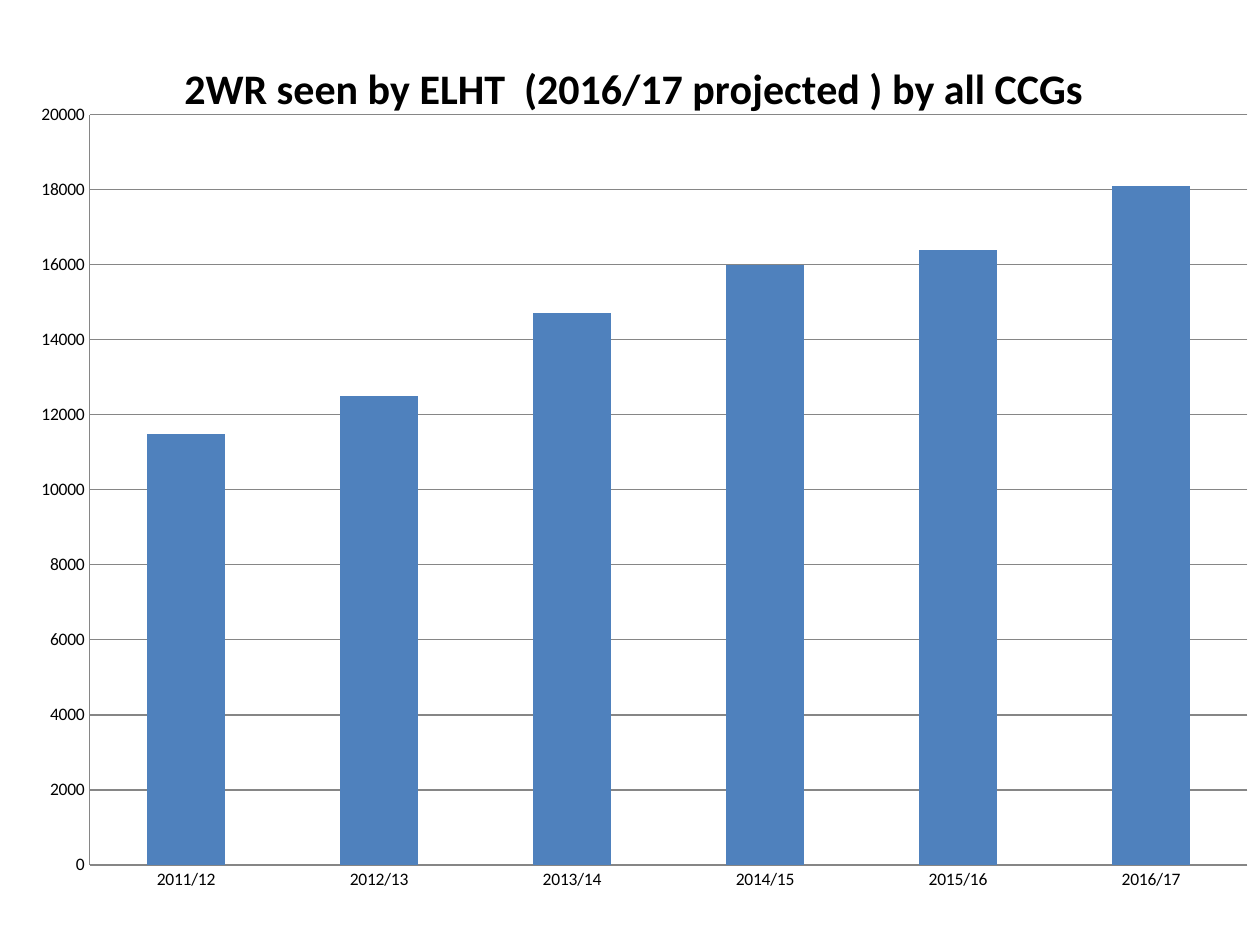
from lxml import etree
from pptx import Presentation
from pptx.chart.data import CategoryChartData
from pptx.dml.color import RGBColor
from pptx.enum.chart import XL_CHART_TYPE, XL_TICK_MARK
from pptx.oxml.ns import qn
from pptx.util import Cm, Pt

COLORS = {"text": "000000", "bar": "4F81BD", "line": "868686", "bg": "FFFFFF"}
FONT = "Calibri"


def write_text(tf, text, size=10, bold=False, color="text"):
    r = tf.paragraphs[0].add_run()
    r.text = text
    r.font.name = FONT
    r.font.size = Pt(size)
    r.font.bold = bold
    r.font.color.rgb = RGBColor.from_string(COLORS[color])


def set_layout(parent, after, **values):
    """Place a chart part by fractions of the chart area."""
    for old in parent.findall(qn("c:layout")):
        parent.remove(old)
    layout = etree.Element(qn("c:layout"))
    manual = etree.SubElement(layout, qn("c:manualLayout"))
    for tag, value in values.items():
        etree.SubElement(manual, qn(f"c:{tag}")).set("val", str(value))
    if after is None:
        parent.insert(0, layout)
    else:
        after.addnext(layout)


prs = Presentation()
prs.slide_width, prs.slide_height = Cm(25.4), Cm(19.05)
s = prs.slides.add_slide(prs.slide_layouts[6])
s.background.fill.solid()
s.background.fill.fore_color.rgb = RGBColor.from_string(COLORS["bg"])

# Yearly figures
data = CategoryChartData()
data.categories = ["2011/12", "2012/13", "2013/14", "2014/15", "2015/16", "2016/17"]
data.add_series("Series 1", [11500, 12500, 14700, 16000, 16400, 18100])

# Column chart
chart = s.shapes.add_chart(XL_CHART_TYPE.COLUMN_CLUSTERED, Cm(0.3), Cm(0.33),
                           Cm(25.1), Cm(18.01), data).chart
chart.has_legend = False
chart.font.name = FONT
chart.font.size = Pt(10)
chart.font.color.rgb = RGBColor.from_string(COLORS["text"])

# Title
chart.has_title = True
title = chart.chart_title
write_text(title.text_frame, "2WR seen by ELHT  (2016/17 projected ) by all CCGs",
           size=24, bold=True)
title.include_in_layout = False
title_xml = title._element
set_layout(title_xml, title_xml.find(qn("c:tx")),
           xMode="edge", yMode="edge", x=0.13, y=0.04)

# Bars
plot = chart.plots[0]
plot.gap_width = 150
plot.vary_by_categories = False
fill = plot.series[0].format.fill
fill.solid()
fill.fore_color.rgb = RGBColor.from_string(COLORS["bar"])
set_layout(chart._chartSpace.chart.plotArea, None, layoutTarget="inner",
           xMode="edge", yMode="edge", x=0.06, y=0.11, w=0.93, h=0.84)

# Axes and gridlines
value_axis = chart.value_axis
value_axis.minimum_scale, value_axis.maximum_scale = 0, 20000
value_axis.major_unit = 2000
value_axis.has_major_gridlines = True
for axis in (chart.category_axis, value_axis):
    axis.major_tick_mark = axis.minor_tick_mark = XL_TICK_MARK.NONE
for part in (chart.category_axis, value_axis, value_axis.major_gridlines):
    part.format.line.width = Pt(0.75)
    part.format.line.color.rgb = RGBColor.from_string(COLORS["line"])

prs.save("out.pptx")
